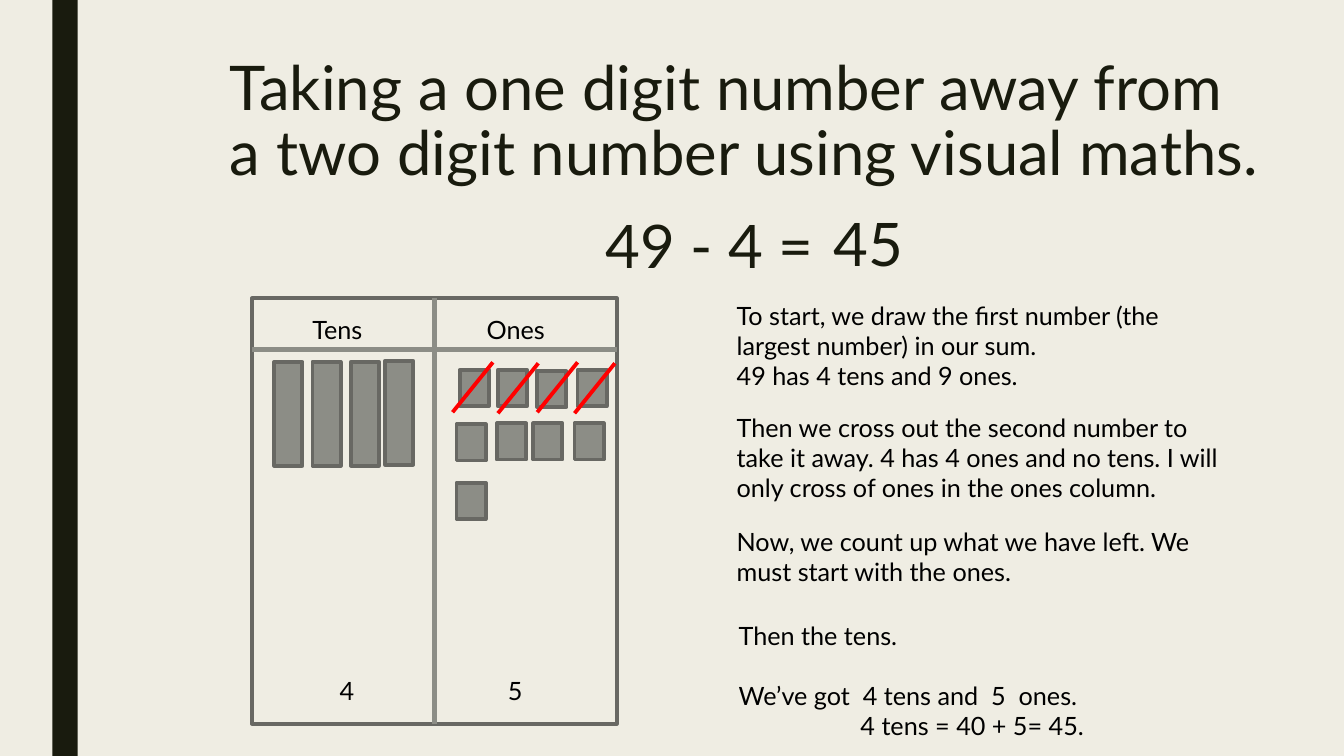
from lxml.etree import SubElement as add_element
from pptx import Presentation
from pptx.dml.color import RGBColor as Color
from pptx.enum.shapes import MSO_CONNECTOR as Connector, MSO_SHAPE as Shape
from pptx.enum.text import MSO_ANCHOR as Anchor, MSO_AUTO_SIZE as AutoSize, PP_ALIGN as Align
from pptx.oxml.ns import qn
from pptx.util import Inches, Pt

COLORS = {
    "background": "EFEDE3",
    "dark": "191B0E",
    "text": "000000",
    "block": "8C8D86",
    "outline": "686863",
    "strike": "FF0000",
}
FONT = "Lato"
SLIDE_WIDTH, SLIDE_HEIGHT = Inches(13.33), Inches(7.5)
COLUMNS, ROWS = 160, 90


def color(name):
    """Return the named palette colour."""
    return Color.from_string(COLORS[name])


def grid(*lengths):
    """Turn alternating grid columns and rows into slide lengths."""
    units = (SLIDE_WIDTH / COLUMNS, SLIDE_HEIGHT / ROWS)
    return [round(length * units[i % 2]) for i, length in enumerate(lengths)]


def write(text_frame, lines, size, color_name, spacing=None):
    """Fill a text frame with left-aligned paragraphs in one style."""
    text_frame.word_wrap = True
    text_frame.auto_size = AutoSize.NONE
    text_frame.vertical_anchor = Anchor.TOP
    text_frame.text = "\n".join(lines)
    for paragraph in text_frame.paragraphs:
        paragraph.alignment = Align.LEFT
        paragraph.line_spacing = spacing
        paragraph.font.name = FONT
        paragraph.font.size = Pt(size)
        paragraph.font.color.rgb = color(color_name)


def add_title(slide, text):
    """Place and format the title placeholder."""
    title = slide.shapes.title
    title.left, title.top, title.width, title.height = grid(26.16, 6.24, 126, 19.44)
    write(title.text_frame, [text], 44, "dark", 0.89)


def add_text(slide, box, lines, size=18, color_name="text", spacing=None):
    """Add a text box at a grid position."""
    shape = slide.shapes.add_textbox(*grid(*box))
    write(shape.text_frame, lines, size, color_name, spacing)
    return shape


def add_box(slide, box, fill=None, line=None):
    """Add a rectangle with an optional fill and outline."""
    shape = slide.shapes.add_shape(Shape.RECTANGLE, *grid(*box))
    shape.shadow.inherit = False
    if fill:
        shape.fill.solid()
        shape.fill.fore_color.rgb = color(fill)
    else:
        shape.fill.background()
    if line:
        shape.line.color.rgb = color(line)
        shape.line.width = Pt(2.75)
    else:
        shape.line.fill.background()


def add_line(slide, ends, color_name, width):
    """Add a straight line between two grid points."""
    line = slide.shapes.add_connector(Connector.STRAIGHT, *grid(*ends))
    line.line.color.rgb = color(color_name)
    line.line.width = Pt(width)
    add_element(line._element.spPr, qn("a:effectLst"))


def add_place_value_chart(slide):
    """Draw the tens and ones frame with its headings and totals."""
    left, top, width, height = 30, 35.52, 43.44, 50.64
    middle, header = left + width / 2, 41.64
    add_box(slide, (left, top, width, height), line="outline")
    add_line(slide, (middle, top, middle, top + height), "block", 3.75)
    add_line(slide, (left, header, left + width, header), "block", 3.75)
    for heading, heading_left, total, total_left in (
        ("Tens", 36, "4", 39.24),
        ("Ones", 56.76, "5", 59.28),
    ):
        add_text(slide, (heading_left, 36.84, 18.72, 4.8), [heading])
        add_text(slide, (total_left, 79.8, 5.52, 4.8), [total])


def add_counters(slide):
    """Draw the ten rods, the one blocks and the crossed-out ones."""
    tens = ((32.64, 43.08), (37.2, 43.08), (41.76, 43.08), (45.84, 42.96))
    ones = (
        (54.72, 44.04), (59.28, 44.04), (63.96, 44.16), (68.76, 44.04),
        (54.36, 50.52), (59.16, 50.4), (63.48, 50.4), (68.4, 50.4),
        (54.36, 57.48),
    )
    for places, size in ((tens, (3.36, 12.36)), (ones, (3.48, 4.32))):
        for place in places:
            add_box(slide, place + size, "block", "outline")
    for left, bottom in ((53.88, 49.08), (59.28, 49.2), (63.96, 49.08), (68.4, 49.2)):
        add_line(slide, (left, bottom, left + 4.8, bottom - 5.95), "strike", 2.75)


def add_steps(slide):
    """Write the explanation beside the chart."""
    steps = (
        (86.52, 35.16, 12.12, [
            "To start, we draw the first number (the largest number) in our sum.",
            "49 has 4 tens and 9 ones.",
        ]),
        (86.52, 48.48, 12.12, [
            "Then we cross out the second number to take it away. 4 has 4 ones "
            "and no tens. I will only cross of ones in the ones column.",
        ]),
        (86.52, 62.04, 8.52, [
            "Now, we count up what we have left. We must start with the ones.",
        ]),
        (86.76, 73.32, 4.8, ["Then the tens."]),
        (86.76, 80.4, 8.52, [
            "We’ve got  4 tens and  5  ones.",
            "4 tens = 40 + 5= 45.",
        ]),
    )
    for left, top, height, lines in steps:
        shape = add_text(slide, (left, top, 60.96, height), lines)
    answer = shape.text_frame.paragraphs[-1]
    answer._p.get_or_add_pPr().set("marL", str(grid(14.5)[0]))


def main():
    """Build the subtraction slide and save it."""
    presentation = Presentation()
    presentation.slide_width, presentation.slide_height = SLIDE_WIDTH, SLIDE_HEIGHT
    slide = presentation.slides.add_slide(presentation.slide_layouts[5])
    slide.background.fill.solid()
    slide.background.fill.fore_color.rgb = color("background")
    add_box(slide, (6.24, 0, 3, ROWS), "dark")
    add_title(
        slide,
        "Taking a one digit number away from a two digit number using visual maths.",
    )
    for left, top, text in ((70.92, 25.92, "49 - 4 ="), (98.04, 25.68, "45")):
        add_text(slide, (left, top, 30, 8.04), [text], 42.9, "dark", 0.79)
    add_place_value_chart(slide)
    add_counters(slide)
    add_steps(slide)
    presentation.save("out.pptx")


if __name__ == "__main__":
    main()
